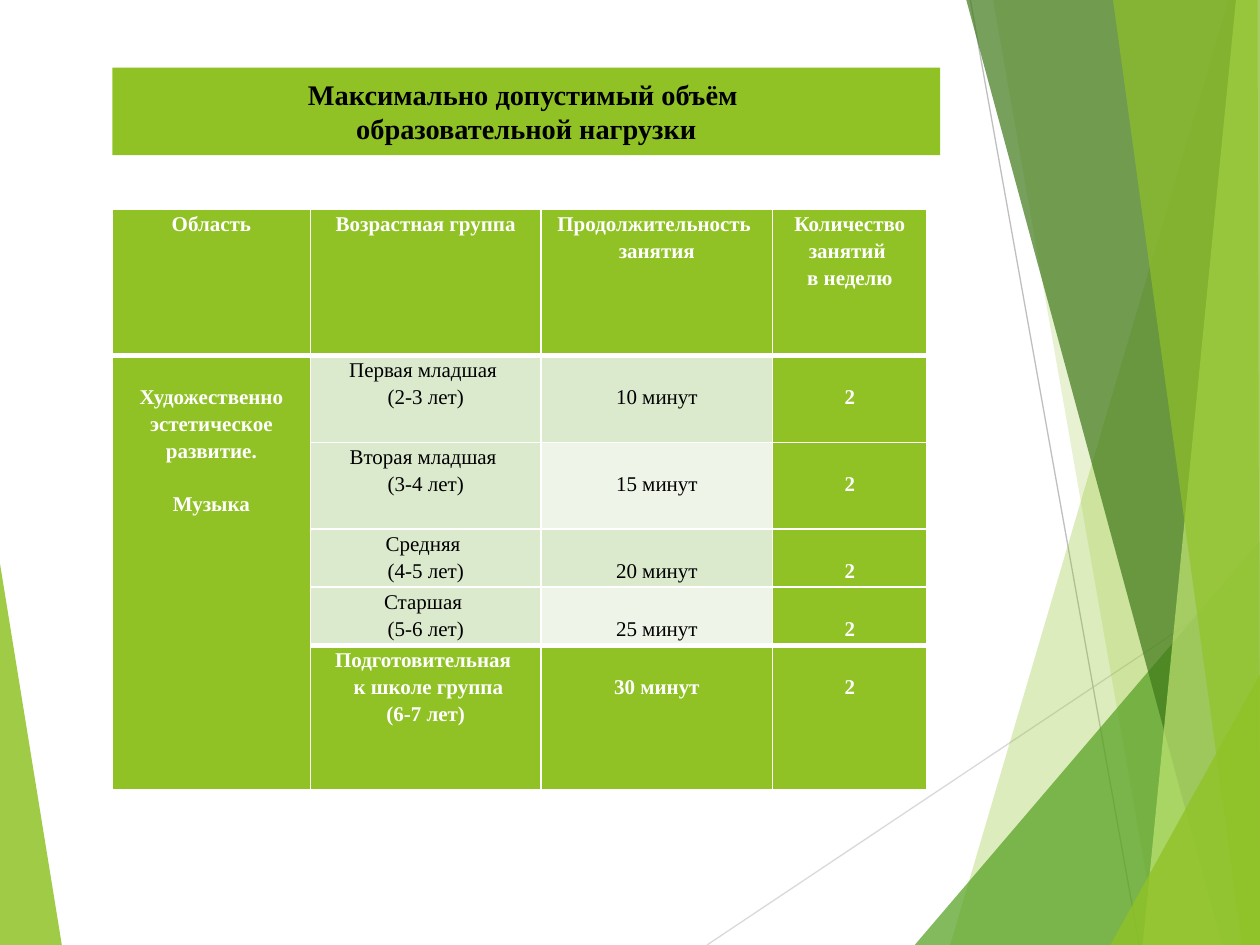
from dataclasses import dataclass

from lxml.etree import SubElement
from pptx import Presentation
from pptx.dml.color import RGBColor
from pptx.enum.shapes import MSO_CONNECTOR
from pptx.enum.text import MSO_ANCHOR, MSO_AUTO_SIZE, PP_ALIGN
from pptx.oxml.ns import qn
from pptx.util import Pt


@dataclass(frozen=True)
class Theme:
    font: str = "Times New Roman"
    head: float = 16.2
    body: float = 12
    lead: float = 1.15
    line: float = 15.4  # height of one table line
    lime: str = "90C226"
    green: str = "54A021"
    dark: str = "3F7819"
    light: str = "C0E474"
    pale: str = "DBE9CD"
    mist: str = "EEF4E8"
    black: str = "000000"
    white: str = "FFFFFF"


@dataclass(frozen=True)
class Facet:
    color: str
    alpha: int
    points: tuple


@dataclass(frozen=True)
class Ray:
    color: str
    start: tuple
    end: tuple


@dataclass(frozen=True)
class Entry:
    lines: tuple
    fill: str
    bold: bool = True
    skip: int = 0  # lines left free above the text
    top: float = 1
    base: float = 1


THEME = Theme()
WIDE, HIGH = 720, 540

# Background, from back to front
DECOR = (
    Facet(THEME.lime, 85, ((-1, 316), (35.3, HIGH), (-1, HIGH))),
    Ray("D9D9D9", (404, HIGH), (WIDE, 329)),
    Ray("BFBFBF", (554.5, 0), (651, HIGH)),
    Facet(THEME.lime, 30, ((702, 0), (543, HIGH), (WIDE, HIGH), (WIDE, 0))),
    Facet(THEME.lime, 20, ((567.5, 0), (662, HIGH), (WIDE, HIGH), (WIDE, 0))),
    Facet(THEME.green, 72, ((522.7, HIGH), (WIDE, 309), (WIDE, HIGH))),
    Facet(THEME.dark, 70, ((552.2, 0), (698.4, HIGH), (WIDE, HIGH), (WIDE, 0))),
    Facet(THEME.light, 70, ((706.3, 0), (653, HIGH), (WIDE, HIGH), (WIDE, 0))),
    Facet(THEME.lime, 65, ((636, 0), (710, HIGH), (WIDE, HIGH), (718.6, 0))),
    Facet(THEME.lime, 80, ((634.5, HIGH), (WIDE, 385.5), (WIDE, HIGH))),
)

TITLE = ("Максимально допустимый объём ", "образовательной нагрузки")
COLS = (113.2, 131.8, 132.4, 88.2)
ROWS = (83.5, 49.6, 49.6, 33.2, 33.2, 82.6)
HEADS = (
    ("Область",),
    ("Возрастная группа",),
    ("Продолжительность ", "занятия"),
    ("Количество занятий ", "в неделю"),
)
AREA = ("Художественно эстетическое развитие.", "Музыка")
GROUPS = (
    (("Первая младшая ", "(2-3 лет)"), "10 минут"),
    (("Вторая младшая ", "(3-4 лет)"), "15 минут"),
    (("Средняя ", "(4-5 лет)"), "20 минут"),
    (("Старшая ", "(5-6 лет)"), "25 минут"),
    (("Подготовительная ", " к школе группа", "(6-7 лет)"), "30 минут"),
)


def rgb(code: str) -> RGBColor:
    return RGBColor.from_string(code)


def paint(fill, code: str) -> None:
    fill.solid()
    fill.fore_color.rgb = rgb(code)


def write(para, text: str, size: float, color: str, bold: bool) -> None:
    run = para.add_run()
    run.text = text
    font = run.font
    font.name, font.size, font.bold = THEME.font, Pt(size), bold
    font.color.rgb = rgb(color)


def draw_facet(shapes, facet: Facet) -> None:
    (left, top), *rest = facet.points
    pen = shapes.build_freeform(Pt(left), Pt(top))
    pen.add_line_segments([(Pt(x), Pt(y)) for x, y in rest], close=True)
    shape = pen.convert_to_shape()
    shape.shadow.inherit = False
    shape.line.fill.background()
    paint(shape.fill, facet.color)
    tint = shape._element.spPr.find(qn("a:solidFill"))[0]
    SubElement(tint, qn("a:alpha"), val=str(facet.alpha * 1000))


def draw_ray(shapes, ray: Ray) -> None:
    ends = [Pt(n) for n in ray.start + ray.end]
    line = shapes.add_connector(MSO_CONNECTOR.STRAIGHT, *ends)
    line.line.width = Pt(0.75)
    line.line.color.rgb = rgb(ray.color)
    SubElement(line._element.spPr, qn("a:effectLst"))


def draw_title(shape) -> None:
    shape.left, shape.top, shape.width, shape.height = map(Pt, (64.2, 38.7, 473, 50))
    paint(shape.fill, THEME.lime)
    frame = shape.text_frame
    frame.word_wrap, frame.auto_size = True, MSO_AUTO_SIZE.NONE
    frame.vertical_anchor = MSO_ANCHOR.MIDDLE
    para = frame.paragraphs[0]
    para.alignment = PP_ALIGN.CENTER
    for i, text in enumerate(TITLE):
        if i:
            para.add_line_break()
        write(para, text, THEME.head, THEME.black, True)


def edge(cell, top: float, base: float) -> None:
    props = cell._tc.get_or_add_tcPr()
    for side, width in (("L", 1), ("R", 1), ("T", top), ("B", base)):
        line = SubElement(props, qn(f"a:ln{side}"), w=str(Pt(width)))
        fill = SubElement(line, qn("a:solidFill"))
        SubElement(fill, qn("a:srgbClr"), val=THEME.white)


def draw_cell(cell, entry: Entry, gap: float = 0) -> None:
    edge(cell, entry.top, entry.base)
    paint(cell.fill, entry.fill)
    cell.margin_left = cell.margin_right = Pt(5)
    cell.margin_top, cell.margin_bottom = Pt(entry.skip * THEME.line), 0
    color = THEME.white if entry.bold else THEME.black
    for i, text in enumerate(entry.lines):
        frame = cell.text_frame
        para = frame.add_paragraph() if i else frame.paragraphs[0]
        para.alignment, para.line_spacing = PP_ALIGN.CENTER, THEME.lead
        para.space_before = Pt(gap if i else 0)
        write(para, text, THEME.body, color, entry.bold)


def draw_table(shapes) -> None:
    box = map(Pt, (64.2, 119.7, sum(COLS), sum(ROWS)))
    table = shapes.add_table(len(ROWS), len(COLS), *box).table
    table.first_row = table.horz_banding = False
    for col, width in zip(table.columns, COLS):
        col.width = Pt(width)
    for row, height in zip(table.rows, ROWS):
        row.height = Pt(height)
    # Header row
    for c, lines in enumerate(HEADS):
        draw_cell(table.cell(0, c), Entry(lines, THEME.lime, base=3))
    # Area, spanning all age groups
    table.cell(1, 0).merge(table.cell(len(GROUPS), 0))
    draw_cell(table.cell(1, 0), Entry(AREA, THEME.lime, skip=1, top=3), THEME.line)
    # Age groups; the last one stands out
    for r, (group, time) in enumerate(GROUPS, 1):
        last = r == len(GROUPS)
        first = THEME.lime if last else THEME.pale
        second = THEME.lime if last else THEME.pale if r % 2 else THEME.mist
        top = 3 if r == 1 or last else 1
        base = 3 if r == len(GROUPS) - 1 else 1
        row = (
            Entry(group, first, last, 0, top, base),
            Entry((time,), second, last, 1, top, base),
            Entry(("2",), THEME.lime, True, 1, top, base),
        )
        for c, entry in enumerate(row, 1):
            draw_cell(table.cell(r, c), entry)


def main() -> None:
    deck = Presentation()
    deck.slide_width, deck.slide_height = Pt(WIDE), Pt(HIGH)
    shapes = deck.slides.add_slide(deck.slide_layouts[5]).shapes
    title = shapes.title
    for part in DECOR:
        if isinstance(part, Ray):
            draw_ray(shapes, part)
        else:
            draw_facet(shapes, part)
    # Bring the title in front of the background
    shapes._spTree.append(title._element)
    draw_title(title)
    draw_table(shapes)
    deck.save("out.pptx")


if __name__ == "__main__":
    main()
